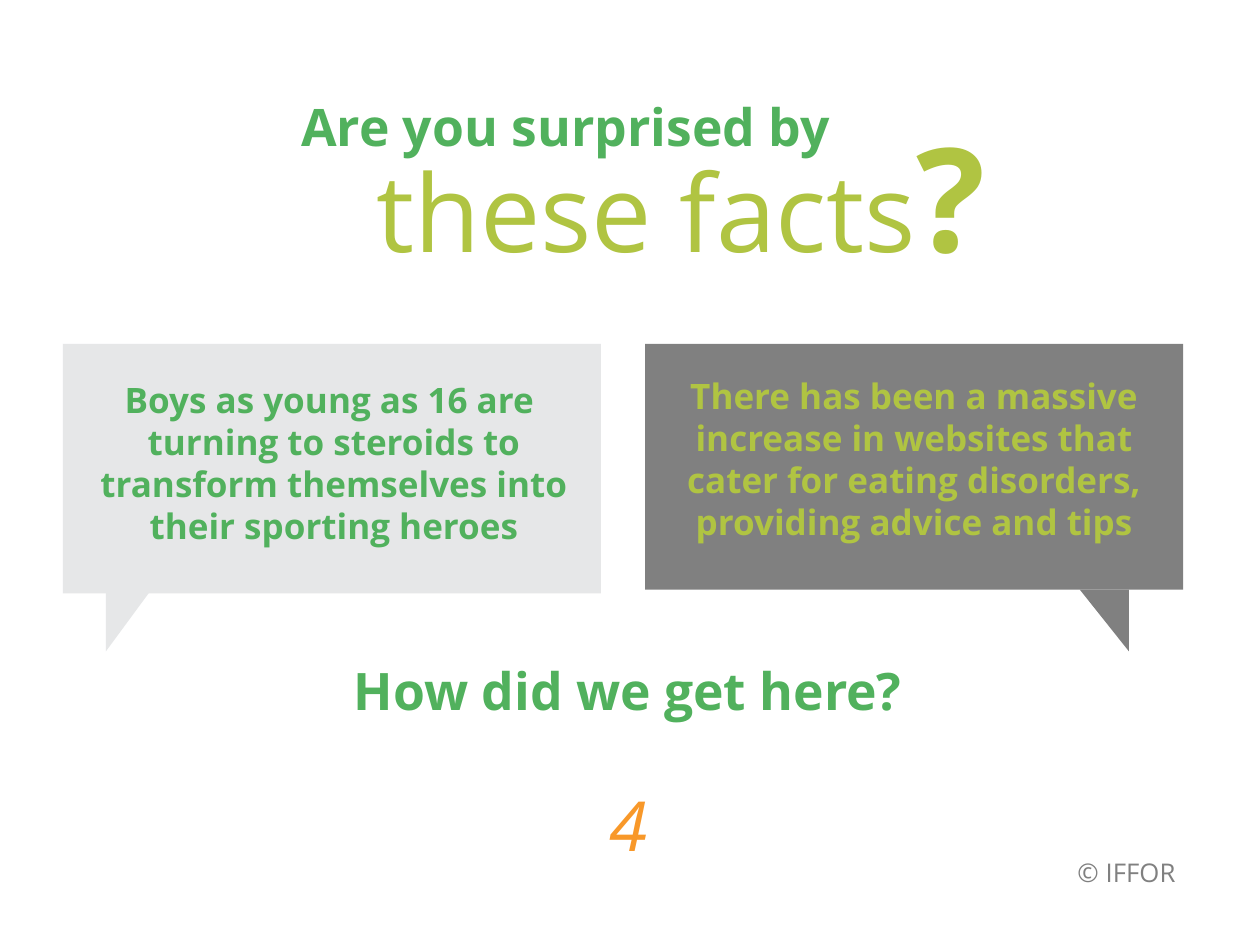
"""Build the slide asking whether the facts are surprising."""
from pptx import Presentation
from pptx.dml.color import RGBColor
from pptx.enum.shapes import MSO_SHAPE
from pptx.enum.text import PP_ALIGN
from pptx.util import Inches, Pt

GREEN = RGBColor(0x51, 0xB1, 0x5D)
LIME = RGBColor(0xB0, 0xC4, 0x42)
ORANGE = RGBColor(0xF8, 0x98, 0x29)
GREY = RGBColor(0x80, 0x80, 0x80)
PALE_GREY = RGBColor(0xE6, 0xE7, 0xE8)

presentation = Presentation()
presentation.slide_width = Inches(10)
presentation.slide_height = Inches(7.5)
slide = presentation.slides.add_slide(presentation.slide_layouts[6])


def add_run(paragraph, text, size, color, bold=False, italic=False):
    run = paragraph.add_run()
    run.text = text
    run.font.name = "Open Sans"
    run.font.size = Pt(size)
    run.font.color.rgb = color
    run.font.bold = bold
    run.font.italic = italic


def add_text(text, left, top, width, height, align=PP_ALIGN.CENTER, **run_format):
    box = slide.shapes.add_textbox(Inches(left), Inches(top), Inches(width), Inches(height))
    frame = box.text_frame
    frame.word_wrap = True
    frame.margin_left = frame.margin_top = frame.margin_right = frame.margin_bottom = 0
    paragraph = frame.paragraphs[0]
    paragraph.alignment = align
    for index, line in enumerate(text.split("\n")):
        if index:
            paragraph.add_line_break()
        add_run(paragraph, line, **run_format)
    return paragraph


add_text("Are you surprised by", 2.39, 0.75, 4.31, 0.5, align=PP_ALIGN.LEFT,
         size=29.5, color=GREEN, bold=True)
title = add_text("these facts", 2.68, 0.86, 5.45, 1.39, size=61.4, color=LIME)
add_run(title, "?", size=82.6, color=LIME, bold=True)

bubbles = [
    (0.5, 1.98, PALE_GREY, [(1.23, 4.64), (0.84, 4.64), (0.84, 5.17)]),
    (5.12, 1.95, GREY, [(8.96, 4.68), (8.57, 4.68), (8.96, 5.17)]),
]
for left, height, color, tail_points in bubbles:
    body = slide.shapes.add_shape(MSO_SHAPE.RECTANGLE, Inches(left), Inches(2.73),
                                  Inches(4.27), Inches(height))
    corners = [(Inches(x), Inches(y)) for x, y in tail_points]
    builder = slide.shapes.build_freeform(*corners[0])
    builder.add_line_segments(corners[1:], close=True)
    tail = builder.convert_to_shape()
    for shape in (body, tail):
        shape.shadow.inherit = False
        shape.fill.solid()
        shape.fill.fore_color.rgb = color
        shape.line.fill.background()

add_text("Boys as young as 16 are \nturning to steroids to transform themselves into "
         "their sporting heroes", 0.64, 3, 4.02, 1.35, size=20, color=GREEN, bold=True)
add_text("There has been a massive increase in websites that cater for eating disorders, "
         "providing advice and tips", 5.21, 2.97, 4.09, 1.35, size=20, color=LIME, bold=True)
add_text("How did we get here?", 0.72, 5.23, 8.53, 0.5, size=29.5, color=GREEN, bold=True)

page_number = add_text("4", 4.66, 6.28, 0.65, 0.59, size=39.3, color=ORANGE, italic=True)
page_number.line_spacing = Pt(42.1)
add_text("© IFFOR", 8.39, 6.8, 0.94, 0.25, align=PP_ALIGN.RIGHT, size=14.7, color=GREY)

presentation.save("out.pptx")
